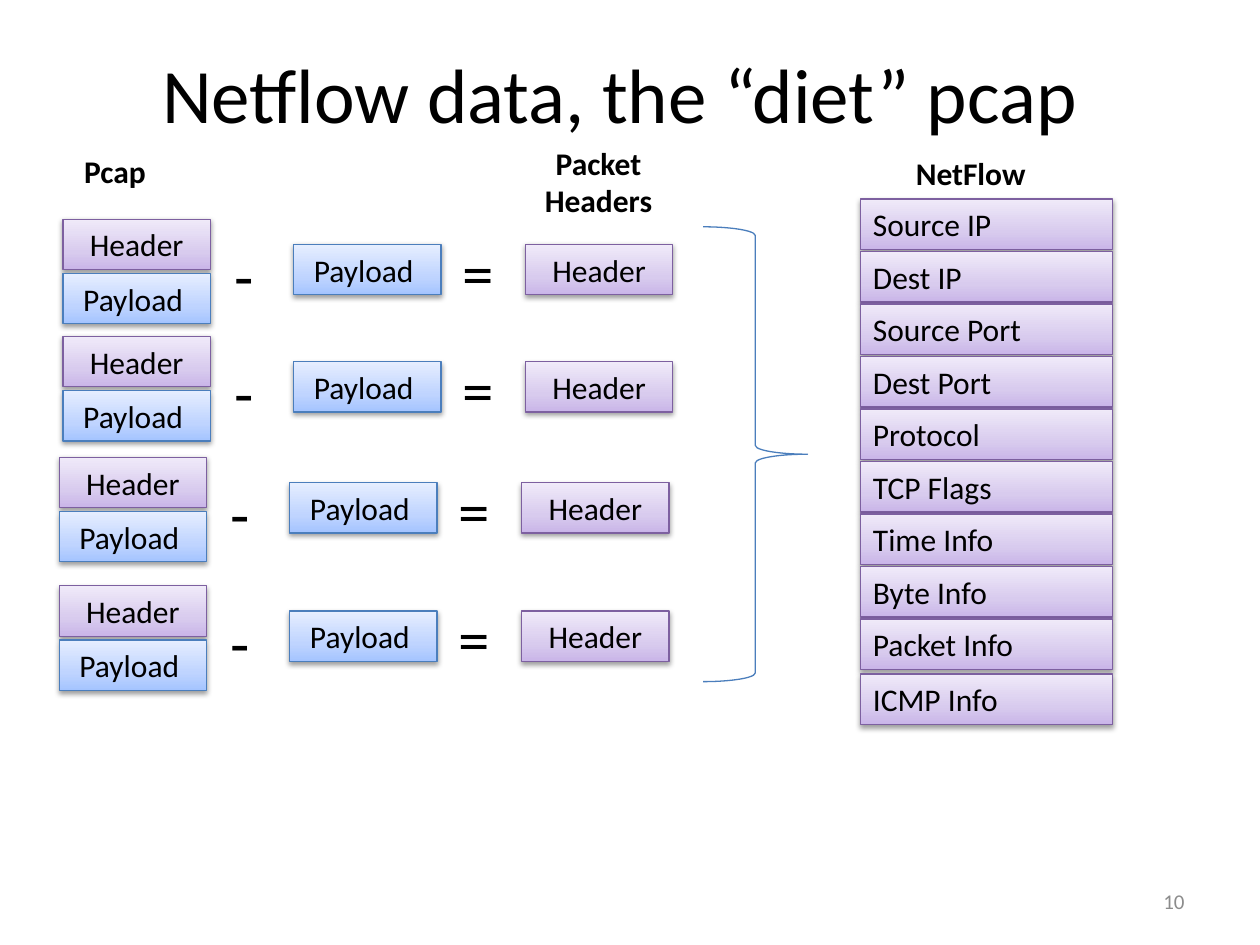
from lxml import etree
from pptx import Presentation
from pptx.dml.color import RGBColor
from pptx.enum.shapes import MSO_SHAPE
from pptx.enum.text import MSO_ANCHOR, MSO_AUTO_SIZE, PP_ALIGN
from pptx.oxml import parse_xml
from pptx.util import Inches, Pt

RECT, BRACE = MSO_SHAPE.RECTANGLE, MSO_SHAPE.RIGHT_BRACE
LEFT, MID, RIGHT = PP_ALIGN.LEFT, PP_ALIGN.CENTER, PP_ALIGN.RIGHT
TOP, CENTER = MSO_ANCHOR.TOP, MSO_ANCHOR.MIDDLE
GROW, FIXED = MSO_AUTO_SIZE.SHAPE_TO_FIT_TEXT, MSO_AUTO_SIZE.NONE
NS = 'xmlns:a="http://schemas.openxmlformats.org/drawingml/2006/main"'
COLORS = {
    "text": "000000",
    "number": "8C8C8C",
    "violet": "7D60A0",
    "blue": "4B7EBC",
}
SHADES = {
    "violet": {0: "C9B5E8", 35: "D8CBEE", 100: "F0EAF9"},
    "blue": {0: "A4C4FF", 35: "BFD4FF", 100: "E6EEFF"},
}

prs = Presentation()
prs.slide_width, prs.slide_height = Inches(10), Inches(7.5)
slide = prs.slides.add_slide(prs.slide_layouts[6])
shapes = slide.shapes


def write(text, x, y, w, h, size=18, bold=False, color="text",
          align=LEFT, anchor=TOP, fit=GROW, box=None):
    area = [Inches(n) for n in (x, y, w, h)]
    shape = shapes.add_shape(RECT, *area) if box else shapes.add_textbox(*area)
    if box:
        paint(shape, box)
    frame = shape.text_frame
    frame.word_wrap = True
    frame.auto_size = fit
    frame.vertical_anchor = anchor
    par = frame.paragraphs[0]
    par.alignment = align
    run = par.add_run()
    run.text = text
    run.font.name = "Calibri"
    run.font.size = Pt(size)
    run.font.bold = bold
    run.font.color.rgb = RGBColor.from_string(COLORS[color])


def paint(shape, tone):
    shape.line.color.rgb = RGBColor.from_string(COLORS[tone])
    shape.line.width = Pt(0.75)
    stops = "".join(f'<a:gs pos="{pos * 1000}"><a:srgbClr val="{shade}"/></a:gs>'
                    for pos, shade in SHADES[tone].items())
    props = shape.fill._xPr
    line = props.find("{*}ln")
    line.addprevious(parse_xml(
        f'<a:gradFill {NS} rotWithShape="1"><a:gsLst>{stops}</a:gsLst>'
        '<a:lin ang="16200000" scaled="0"/></a:gradFill>'))
    glow = parse_xml(
        f'<a:effectLst {NS}><a:outerShdw blurRad="40000" dist="20000" '
        'dir="5400000" rotWithShape="0"/></a:effectLst>')
    tint = etree.SubElement(glow[0], glow.tag.replace("effectLst", "srgbClr"), val="000000")
    etree.SubElement(tint, glow.tag.replace("effectLst", "alpha"), val="38000")
    line.addnext(glow)


write("Netflow data, the “diet” pcap", 0.71, 0.22, 8.42, 1.03,
      size=44, align=MID, anchor=CENTER, fit=FIXED)
write("10", 7.17, 6.95, 2.33, 0.4, size=12, color="number",
      align=RIGHT, anchor=CENTER, fit=FIXED)

write("Pcap", 0.57, 1.16, 0.83, 0.4, bold=True)
write("Packet Headers", 4.03, 1.09, 1.44, 0.71, bold=True, align=MID)
write("NetFlow", 7.17, 1.17, 1.5, 0.4, bold=True)

fields = ["Source IP", "Dest IP", "Source Port", "Dest Port", "Protocol",
          "TCP Flags", "Time Info", "Byte Info", "Packet Info"]
step = 5 / 12
for i, name in enumerate(fields):
    write(name, 6.83, 1.58 + i * step, 2, 0.4, box="violet")
write("ICMP Info", 6.83, 5.35, 2, 0.4, box="violet")

parts = [("Header", 0, 0, "violet"), ("Payload ", 0, 0.43, "blue"),
         ("Payload ", 1.83, 0.2, "blue"), ("Header", 3.67, 0.2, "violet")]
signs = [("-", 1.26, 0.09), ("=", 3.07, 0.06)]
for x, y in [(0.5, 1.74), (0.5, 2.67), (0.47, 3.63), (0.47, 4.65)]:
    for name, dx, dy, tone in parts:
        write(name, x + dx, y + dy, 1.17, 0.4, align=MID, box=tone)
    for sign, dx, dy in signs:
        write(sign, x + dx, y + dy, 0.42, 0.71, size=36)

brace = shapes.add_shape(BRACE, Inches(5.58), Inches(1.8), Inches(0.83), Inches(3.61))
brace.shadow.inherit = False
brace.fill.background()
brace.line.color.rgb = RGBColor.from_string(COLORS["blue"])
brace.line.width = Pt(0.75)

prs.save("out.pptx")
